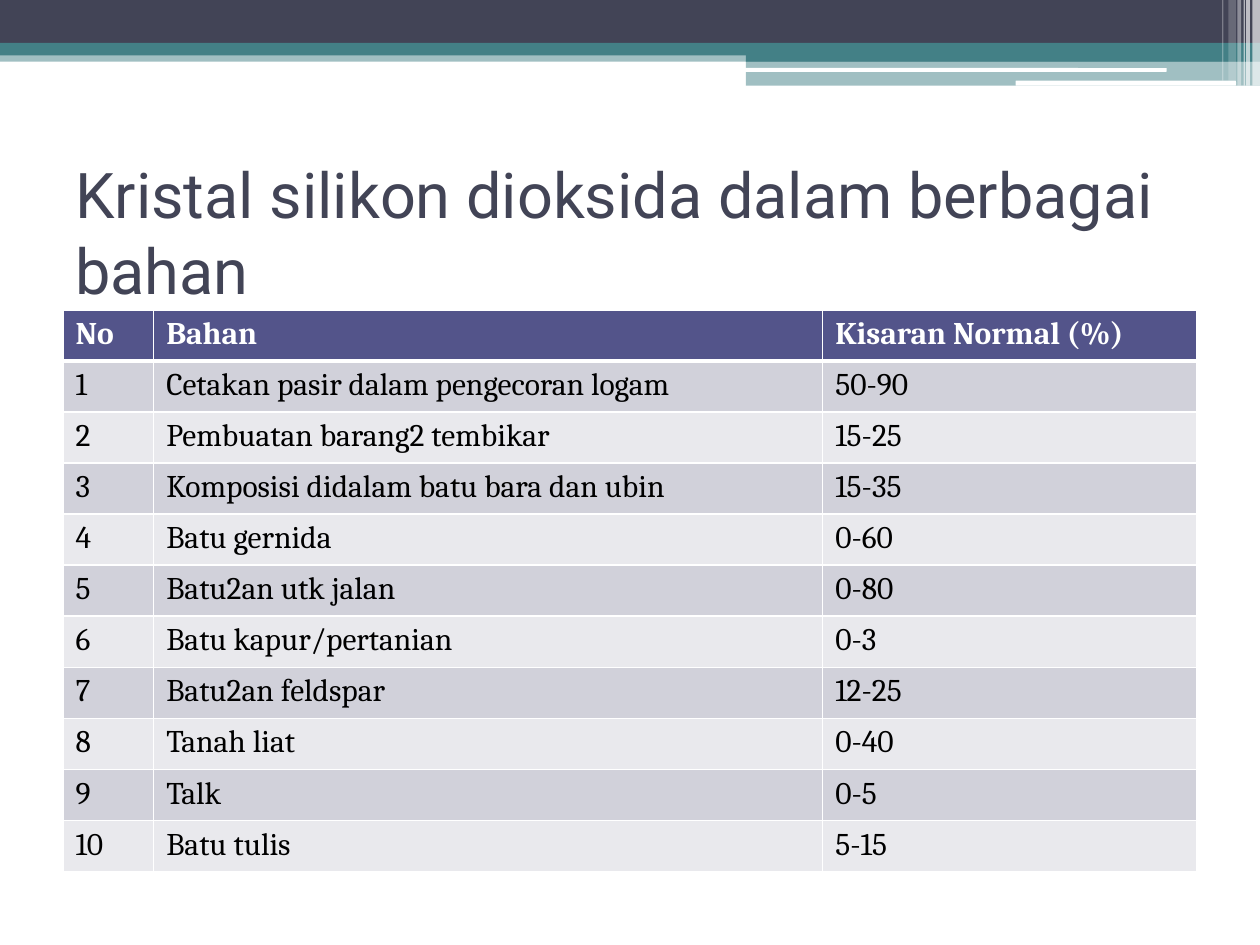
from lxml import etree
from pptx import Presentation
from pptx import util as u
from pptx.dml.color import RGBColor
from pptx.enum import shapes, text
from pptx.oxml import ns

SLIDE_WIDTH, SLIDE_HEIGHT = u.Inches(10), u.Inches(7.5)
GRID_COLUMNS, GRID_ROWS = 100, 75

WHITE = RGBColor(0xFF, 0xFF, 0xFF)
BLACK = RGBColor(0x00, 0x00, 0x00)
SLATE = RGBColor(0x42, 0x44, 0x56)
TEAL = RGBColor(0x43, 0x80, 0x86)
INDIGO = RGBColor(0x53, 0x54, 0x8A)
ROW_DARK = RGBColor(0xD1, 0xD1, 0xDA)
ROW_LIGHT = RGBColor(0xE9, 0xE9, 0xED)

TITLE = "Kristal silikon dioksida dalam berbagai bahan"
HEADINGS = ("No", "Bahan", "Kisaran Normal (%)")
MATERIALS = [
    ("Cetakan pasir dalam pengecoran logam", "50-90"),
    ("Pembuatan barang2 tembikar", "15-25"),
    ("Komposisi didalam batu bara dan ubin", "15-35"),
    ("Batu gernida", "0-60"),
    ("Batu2an utk jalan", "0-80"),
    ("Batu kapur/pertanian", "0-3"),
    ("Batu2an feldspar", "12-25"),
    ("Tanah liat", "0-40"),
    ("Talk", "0-5"),
    ("Batu tulis", "5-15"),
]


def columns(count):
    return round(SLIDE_WIDTH * count / GRID_COLUMNS)


def rows(count):
    return round(SLIDE_HEIGHT * count / GRID_ROWS)


def grid_box(left, top, width, height):
    return columns(left), rows(top), columns(width), rows(height)


def add_child(parent, tag, **attributes):
    return etree.SubElement(parent, ns.qn(tag), attributes)


def write(frame, words, *, font, size, color, bold=False):
    span = frame.paragraphs[0].add_run()
    span.text = words
    span.font.name = font
    span.font.size = u.Pt(size)
    span.font.bold = bold
    span.font.color.rgb = color


def add_bar(page, box, color, opacity=100, rounded=False):
    preset = shapes.MSO_SHAPE.ROUNDED_RECTANGLE if rounded else shapes.MSO_SHAPE.RECTANGLE
    bar = page.shapes.add_shape(preset, *box)
    bar.shadow.inherit = False
    bar.line.fill.background()
    bar.fill.solid()
    bar.fill.fore_color.rgb = color
    if opacity < 100:
        tint = bar.fill._xPr.find(".//" + ns.qn("a:srgbClr"))
        add_child(tint, "a:alpha", val=str(opacity * 1000))


def add_header(page, left, top, width):
    """Full-width bands, a stepped tab on the right and fading stripes at the edge."""
    tab = 59.2

    def place(x, y, wide, high, *style, **options):
        add_bar(page, grid_box(left + x, top + y, wide, high), *style, **options)

    place(0, 4, width, 0.9, TEAL, 50)
    place(0, 0, width, 3.4, SLATE)
    place(0, 3.4, width, 1, TEAL)
    place(tab, 3.9, width - tab, 1, TEAL)
    place(tab, 4.8, width - tab, 2, TEAL, 50)
    place(tab - 0.1, 5.4, 33.5, 0.3, WHITE, rounded=True)
    place(80.6, 6.4, 17.5, 0.4, WHITE, rounded=True)

    stripes = [
        (99.4, 0.6, 6.8, 65), (98.9, 0.3, 6.8, 65), (98.7, 0.1, 6.8, 60),
        (98.2, 0.3, 6.8, 40), (97.5, 0.6, 6.4, 20), (97, 0.1, 6.4, 30),
    ]
    for x, wide, high, opacity in stripes:
        place(x, 0, wide, high, WHITE, opacity)


def add_title(page, box):
    frame = page.shapes.add_textbox(*box).text_frame
    frame.word_wrap = True
    frame.vertical_anchor = text.MSO_ANCHOR.MIDDLE
    write(frame, TITLE, font="Roboto", size=36, color=SLATE)


def style_cell(cell, fill, bottom_width):
    cell.fill.solid()
    cell.fill.fore_color.rgb = fill
    properties = cell._tc.get_or_add_tcPr()
    widths = {"a:lnL": 1, "a:lnR": 1, "a:lnT": 1, "a:lnB": bottom_width}
    for position, (side, width) in enumerate(widths.items()):
        border = etree.Element(ns.qn(side), w=str(u.Pt(width)))
        solid = add_child(border, "a:solidFill")
        add_child(solid, "a:srgbClr", val=str(WHITE))
        properties.insert(position, border)


def add_materials_table(page, box):
    left, top, width, height = box
    records = [HEADINGS]
    records += [(str(number), *material) for number, material in enumerate(MATERIALS, 1)]
    table = page.shapes.add_table(len(records), len(HEADINGS), *box).table
    for column, share in zip(table.columns, (0.08, 0.59, 0.33)):
        column.width = round(width * share)
    for index, record in enumerate(records):
        heading = index == 0
        # The border under the headings is shared with the first data row.
        fill = INDIGO if heading else (ROW_LIGHT, ROW_DARK)[index % 2]
        for cell, words in zip(table.rows[index].cells, record):
            style_cell(cell, fill, 3 if heading else 1)
            if index == 1:
                cell._tc.tcPr.find(ns.qn("a:lnT")).set("w", str(u.Pt(3)))
            write(cell.text_frame, words, font="Cambria", size=18,
                  color=WHITE if heading else BLACK, bold=heading)


def main():
    deck = Presentation()
    deck.slide_width, deck.slide_height = SLIDE_WIDTH, SLIDE_HEIGHT
    page = deck.slides.add_slide(deck.slide_layouts[6])
    page.background.fill.solid()
    page.background.fill.fore_color.rgb = WHITE
    add_header(page, 0, 0, GRID_COLUMNS)
    add_title(page, grid_box(5, 12.5, 90, 11.7))
    add_materials_table(page, grid_box(5, 24.6, 90, 44.6))
    deck.save("out.pptx")


if __name__ == "__main__":
    main()
